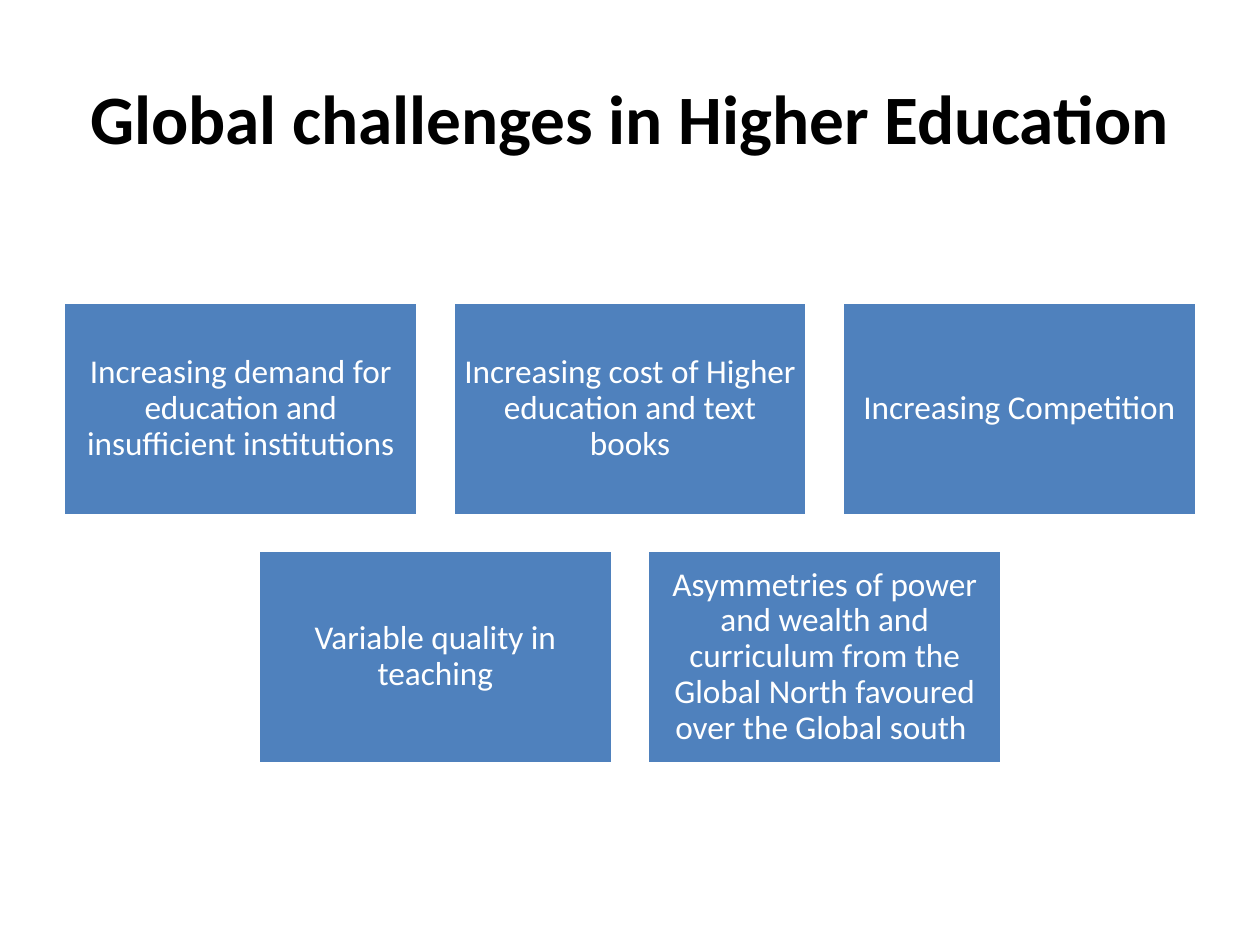
from pptx import Presentation
from pptx.dml.color import RGBColor
from pptx.enum import shapes, text
from pptx.util import Inches, Pt

SLIDE_WIDTH = 10
CARD_WIDTH, CARD_HEIGHT, GAP = 2.81, 1.69, 0.28
CARDS_TOP = 2.4
CHALLENGE_ROWS = [
    [
        "Increasing demand for education and insufficient institutions",
        "Increasing cost of Higher education and text books",
        "Increasing Competition",
    ],
    [
        "Variable quality in teaching",
        "Asymmetries of power and wealth and curriculum from the "
        "Global North favoured over the Global south ",
    ],
]


def color(hex_value):
    """Turn a hex string into a colour."""
    return RGBColor.from_string(hex_value)


def write(shape, wording, size, hex_value, bold=False):
    """Put centred, wrapped text into a shape and return its paragraph."""
    frame = shape.text_frame
    frame.word_wrap = True
    frame.vertical_anchor = text.MSO_ANCHOR.MIDDLE
    frame.text = wording
    paragraph = frame.paragraphs[0]
    paragraph.alignment = text.PP_ALIGN.CENTER
    font = paragraph.runs[0].font
    font.name, font.size, font.bold = "Calibri", Pt(size), bold
    font.color.rgb = color(hex_value)
    return paragraph


def add_title(slide, wording):
    """Add the slide heading."""
    heading = slide.shapes.add_textbox(Inches(0.5), Inches(0.3), Inches(9), Inches(1.25))
    write(heading, wording, 39.6, "000000", bold=True)


def add_card(slide, left, top, wording):
    """Add one challenge as a filled rectangle."""
    card = slide.shapes.add_shape(
        shapes.MSO_SHAPE.RECTANGLE,
        Inches(left), Inches(top), Inches(CARD_WIDTH), Inches(CARD_HEIGHT),
    )
    card.shadow.inherit = False
    card.fill.solid()
    card.fill.fore_color.rgb = color("4F81BD")
    card.line.color.rgb = color("FFFFFF")
    card.line.width = Pt(2)
    frame = card.text_frame
    frame.margin_left = frame.margin_right = Inches(0.08)
    frame.margin_top = frame.margin_bottom = Inches(0.08)
    write(card, wording, 19, "FFFFFF").line_spacing = 0.9


def add_card_row(slide, top, challenges):
    """Add a row of cards centred across the slide."""
    step = CARD_WIDTH + GAP
    first_left = (SLIDE_WIDTH - len(challenges) * step + GAP) / 2
    for column, challenge in enumerate(challenges):
        add_card(slide, first_left + column * step, top, challenge)


def main():
    """Build and save the slide."""
    deck = Presentation()
    deck.slide_width, deck.slide_height = Inches(SLIDE_WIDTH), Inches(7.5)
    slide = deck.slides.add_slide(deck.slide_layouts[6])
    add_title(slide, "Global challenges in Higher Education")
    for row, challenges in enumerate(CHALLENGE_ROWS):
        add_card_row(slide, CARDS_TOP + row * (CARD_HEIGHT + GAP), challenges)
    deck.save("out.pptx")


if __name__ == "__main__":
    main()
